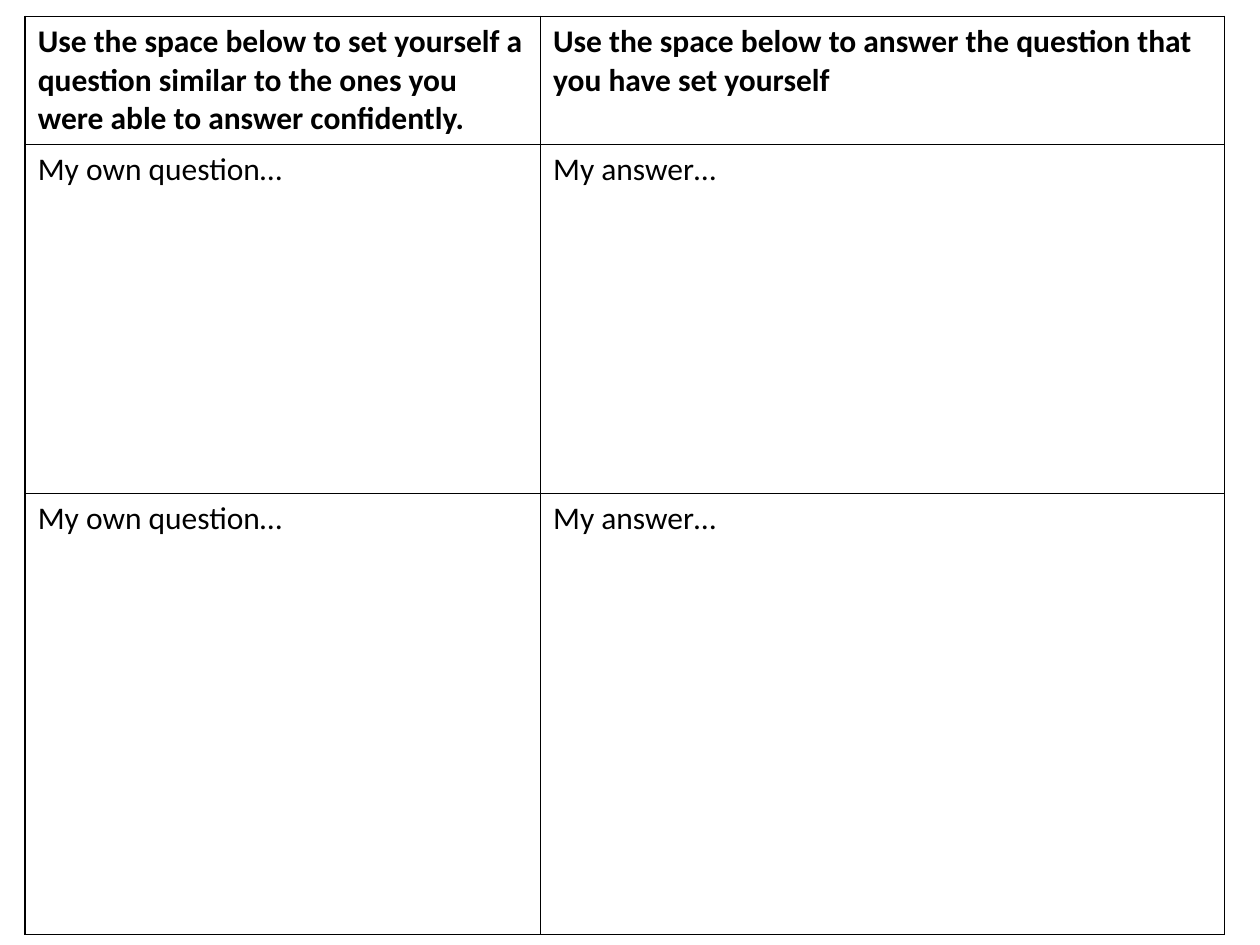
from dataclasses import dataclass

from lxml import etree
from pptx import Presentation
from pptx import util as u
from pptx.dml import color
from pptx.oxml import ns


@dataclass(frozen=True)
class Theme:
    font: str = "Calibri"
    size: int = 18
    ink: str = "000000"
    paper: str = "FFFFFF"
    border_width: int = 1


THEME = Theme()
COLUMN_WIDTHS = (4.09, 5.43)
ROW_HEIGHTS = (0.98, 2.77, 3.5)
HEADINGS = (
    "Use the space below to set yourself a question similar to the ones you were able to answer confidently.",
    "Use the space below to answer the question that you have set yourself",
)
PROMPTS = ("My own question…", "My answer…")


def add_borders(cell):
    properties = cell._tc.get_or_add_tcPr()
    for position, side in enumerate(("lnL", "lnR", "lnT", "lnB")):
        line = etree.Element(ns.qn(f"a:{side}"), w=str(u.Pt(THEME.border_width)))
        fill = etree.SubElement(line, ns.qn("a:solidFill"))
        etree.SubElement(fill, ns.qn("a:srgbClr"), val=THEME.ink)
        properties.insert(position, line)


def fill_cell(cell, words, bold):
    cell.fill.solid()
    cell.fill.fore_color.rgb = color.RGBColor.from_string(THEME.paper)
    add_borders(cell)
    run = cell.text_frame.paragraphs[0].add_run()
    run.text = words
    run.font.name = THEME.font
    run.font.size = u.Pt(THEME.size)
    run.font.bold = bold
    run.font.color.rgb = color.RGBColor.from_string(THEME.ink)


def add_worksheet_table(slide, rows):
    table = slide.shapes.add_table(
        len(rows), len(COLUMN_WIDTHS), u.Inches(0.2), u.Inches(0.13),
        u.Inches(sum(COLUMN_WIDTHS)), u.Inches(sum(ROW_HEIGHTS)),
    ).table
    table.horz_banding = False
    for column, width in zip(table.columns, COLUMN_WIDTHS):
        column.width = u.Inches(width)
    for row_number, (row, height, texts) in enumerate(zip(table.rows, ROW_HEIGHTS, rows)):
        row.height = u.Inches(height)
        for cell, words in zip(row.cells, texts):
            fill_cell(cell, words, bold=row_number == 0)


def main():
    presentation = Presentation()
    presentation.slide_width = u.Inches(10)
    presentation.slide_height = u.Inches(7.5)
    slide = presentation.slides.add_slide(presentation.slide_layouts[6])
    add_worksheet_table(slide, (HEADINGS, PROMPTS, PROMPTS))
    presentation.save("out.pptx")


if __name__ == "__main__":
    main()
